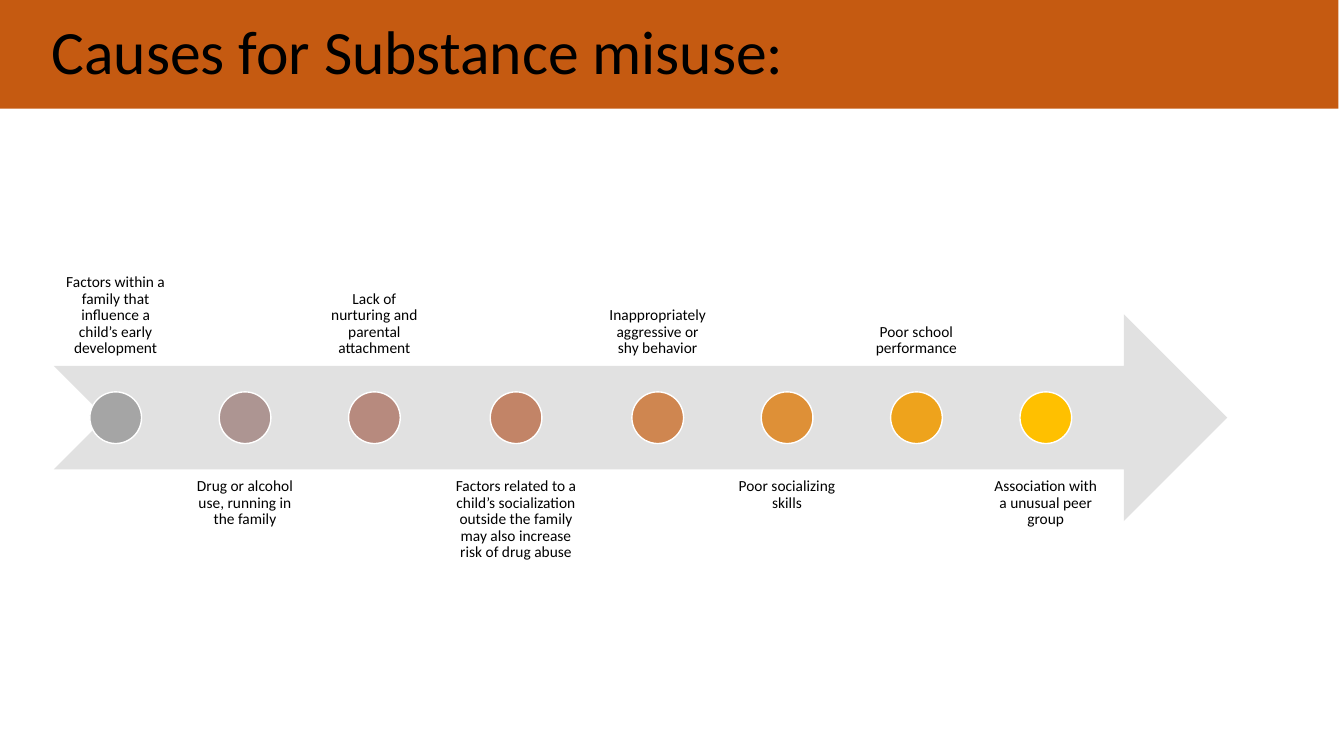
from pptx import Presentation
from pptx.dml.color import RGBColor
from pptx.enum.shapes import MSO_SHAPE
from pptx.enum.text import MSO_ANCHOR, PP_ALIGN
from pptx.util import Cm, Pt

RECT, OVAL, ARROW = MSO_SHAPE.RECTANGLE, MSO_SHAPE.OVAL, MSO_SHAPE.NOTCHED_RIGHT_ARROW
TOP, MIDDLE, BOTTOM = MSO_ANCHOR.TOP, MSO_ANCHOR.MIDDLE, MSO_ANCHOR.BOTTOM
LEFT, CENTER = PP_ALIGN.LEFT, PP_ALIGN.CENTER

LABEL_W, WIDE_LABEL_W, LABEL_GAP = 3.11, 3.73, 0.15
CAUSES = [
    ("Factors within a family that influence a child’s early development", "A5A5A5", LABEL_W),
    ("Drug or alcohol use, running in the family", "AD9592", LABEL_W),
    ("Lack of nurturing and parental attachment", "B78A7E", LABEL_W),
    ("Factors related to a child’s socialization outside the family may also increase "
     "risk of drug abuse", "C28467", WIDE_LABEL_W),
    ("Inappropriately aggressive or shy behavior", "CF8650", LABEL_W),
    ("Poor socializing skills", "DE9037", LABEL_W),
    ("Poor school performance", "EEA31C", LABEL_W),
    ("Association with a unusual peer group", "FFC000", LABEL_W),
]


def rgb(value):
    return RGBColor.from_string(value)


def add_block(s, kind, x, y, w, h, fill, line=None):
    sp = s.shapes.add_shape(kind, Cm(x), Cm(y), Cm(w), Cm(h))
    sp.shadow.inherit = False
    sp.fill.solid()
    sp.fill.fore_color.rgb = rgb(fill)
    if line:
        sp.line.color.rgb = rgb(line)
        sp.line.width = Pt(1)
    else:
        sp.line.fill.background()
    return sp


def write(sp, text, size, align=LEFT, anchor=TOP, inset=0.22, left=None):
    tf = sp.text_frame
    tf.word_wrap = True
    tf.vertical_anchor = anchor
    tf.margin_left = Cm(inset if left is None else left)
    tf.margin_right = tf.margin_top = tf.margin_bottom = Cm(inset)
    p = tf.paragraphs[0]
    p.alignment = align
    p.line_spacing = 0.9
    r = p.add_run()
    r.text = text
    r.font.name = "Calibri"
    r.font.size = Pt(size)
    r.font.color.rgb = rgb("000000")


def add_title(s, x, y, w, h):
    sp = add_block(s, RECT, x, y, w, h, "C55A11")
    write(sp, "Causes for Substance misuse:", 44, anchor=MIDDLE, left=1.3)


def add_timeline(s, x, y, w, h):
    add_block(s, ARROW, x, y, w, h, "E1E1E1")
    dot = h / 4
    for i, (text, color, label_w) in enumerate(CAUSES):
        above = i % 2 == 0
        label_y = y - 0.75 * h if above else y + 0.75 * h
        sp = s.shapes.add_textbox(Cm(x), Cm(label_y), Cm(label_w), Cm(h))
        write(sp, text, 11, align=CENTER, anchor=BOTTOM if above else TOP)
        add_block(s, OVAL, x + (label_w - dot) / 2, y + (h - dot) / 2, dot, dot,
                  color, line="FFFFFF")
        x += label_w + LABEL_GAP


def main():
    prs = Presentation()
    prs.slide_width, prs.slide_height = Cm(33.87), Cm(19.05)
    s = prs.slides.add_slide(prs.slide_layouts[6])
    add_title(s, 0, 0, 33.73, 2.74)
    add_timeline(s, 1.36, 7.92, 29.57, 5.21)
    prs.save("out.pptx")


if __name__ == "__main__":
    main()
